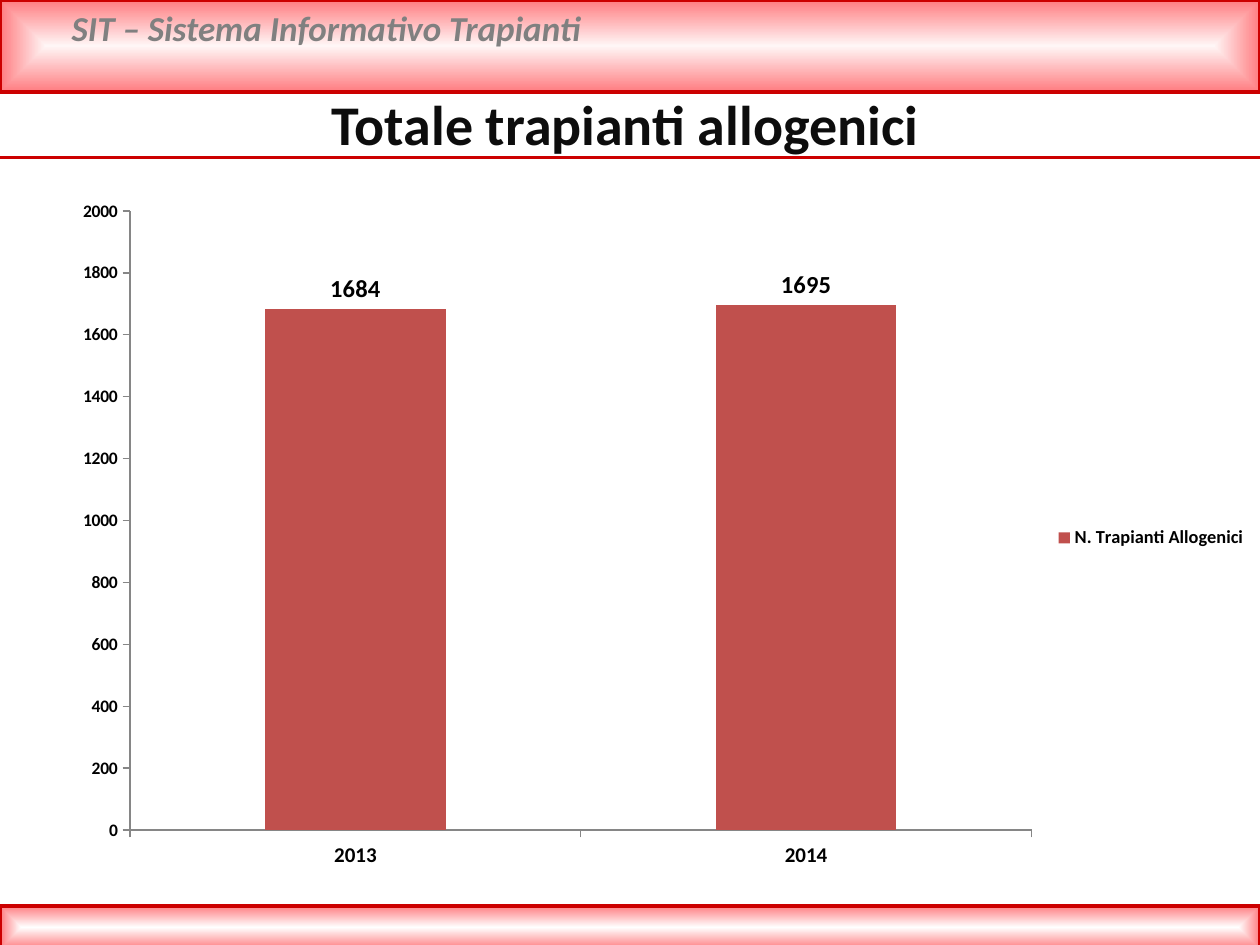
from lxml import etree
from pptx import Presentation
from pptx import util as u
from pptx.chart.data import CategoryChartData
from pptx.dml.color import RGBColor
from pptx.enum import chart as ch, shapes, text
from pptx.oxml import parse_xml
from pptx.oxml.ns import nsdecls, qn

COLORS = {"rule": "CC0000", "band": "FF7C80", "header_glow": "FFF6F6",
          "footer_glow": "FFFFFF", "system": "808080", "title": "0D0D0D",
          "bar": "C0504D", "axis": "868686", "label": "000000"}
FONT = "Calibri"
BLANK_LAYOUT = 6


def rgb(name):
    return RGBColor.from_string(COLORS[name])


def set_font(font, color, **formats):
    font.name = FONT
    font.color.rgb = rgb(color)
    for name, value in formats.items():
        setattr(font, name, u.Pt(value) if name == "size" else value)


def set_line(line, color, width):
    line.color.rgb = rgb(color)
    line.width = u.Pt(width)


def add_band(page, top, height, glow):
    """Full-width bar whose gradient runs from its centre to its edges."""
    band = page.shapes.add_shape(shapes.MSO_SHAPE.RECTANGLE, 0, u.Inches(top),
                                 u.Inches(10), u.Inches(height))
    band.shadow.inherit = False
    set_line(band.line, "rule", 2)
    gradient = parse_xml(
        f'<a:gradFill {nsdecls("a")} rotWithShape="1"><a:gsLst>'
        f'<a:gs pos="0"><a:srgbClr val="{COLORS[glow]}"/></a:gs>'
        f'<a:gs pos="100000"><a:srgbClr val="{COLORS["band"]}"/></a:gs></a:gsLst>'
        '<a:path path="shape"><a:fillToRect l="50000" t="50000" r="50000" b="50000"/>'
        '</a:path></a:gradFill>')
    band.element.spPr.find(qn("a:prstGeom")).addnext(gradient)


def add_rule(page, top):
    rule = page.shapes.add_connector(shapes.MSO_CONNECTOR.STRAIGHT, 0, u.Inches(top),
                                     u.Inches(10), u.Inches(top))
    set_line(rule.line, "rule", 2)
    etree.SubElement(rule.element.spPr, qn("a:effectLst"))


def add_text(page, bounds, words, color, align, **formats):
    box = page.shapes.add_textbox(*map(u.Inches, bounds))
    box.text_frame.word_wrap = True
    para = box.text_frame.paragraphs[0]
    para.alignment = align
    span = para.add_run()
    span.text = words
    set_font(span.font, color, **formats)


def place_plot(chart, **fractions):
    """Fix the inner plot area, in fractions of the chart."""
    area = chart.element.find(".//" + qn("c:plotArea"))
    for layout in area.findall(qn("c:layout")):
        area.remove(layout)
    sizes = "".join(f'<c:{name} val="{value}"/>' for name, value in fractions.items())
    area.insert(0, parse_xml(
        f'<c:layout {nsdecls("c")}><c:manualLayout><c:layoutTarget val="inner"/>'
        f'<c:xMode val="edge"/><c:yMode val="edge"/>{sizes}'
        '</c:manualLayout></c:layout>'))


def style_axis(axis, size):
    axis.has_major_gridlines = False
    axis.major_tick_mark = ch.XL_TICK_MARK.OUTSIDE
    axis.minor_tick_mark = ch.XL_TICK_MARK.NONE
    set_line(axis.format.line, "axis", 0.75)
    set_font(axis.tick_labels.font, "label", size=size, bold=True)


def add_transplant_chart(page, bounds):
    data = CategoryChartData()
    data.categories = ["2013", "2014"]
    data.add_series("N. Trapianti Allogenici", [1684, 1695])
    chart = page.shapes.add_chart(ch.XL_CHART_TYPE.COLUMN_CLUSTERED,
                                  *map(u.Inches, bounds), data).chart
    set_font(chart.font, "label", size=10)
    chart.has_title = False
    place_plot(chart, x=0.06, y=0.03, w=0.75, h=0.89)

    style_axis(chart.category_axis, 12)
    style_axis(chart.value_axis, 10)
    for name, value in {"minimum_scale": 0, "maximum_scale": 2000,
                        "major_unit": 200}.items():
        setattr(chart.value_axis, name, value)

    chart.has_legend = True
    chart.legend.position = ch.XL_LEGEND_POSITION.RIGHT
    chart.legend.include_in_layout = False
    set_font(chart.legend.font, "label", size=10.5, bold=True)

    plot = chart.plots[0]
    plot.gap_width = 150
    plot.vary_by_categories = False
    series = plot.series[0]
    series.format.fill.solid()
    series.format.fill.fore_color.rgb = rgb("bar")
    labels = series.data_labels
    labels.show_value = True
    labels.position = ch.XL_LABEL_POSITION.OUTSIDE_END
    set_font(labels.font, "label", size=14, bold=True)


def main():
    deck = Presentation()
    deck.slide_width, deck.slide_height = u.Inches(10), u.Inches(7.5)
    page = deck.slides.add_slide(deck.slide_layouts[BLANK_LAYOUT])
    add_band(page, 0, 0.73, "header_glow")
    add_text(page, (0.47, 0, 8.98, 0.44), "SIT – Sistema Informativo Trapianti",
             "system", text.PP_ALIGN.LEFT, size=20, bold=True, italic=True)
    add_band(page, 7.19, 0.34, "footer_glow")
    add_rule(page, 1.25)
    add_transplant_chart(page, (0.46, 1.51, 9.54, 5.52))
    add_text(page, (0.33, 0.66, 9.27, 0.64), "Totale trapianti allogenici",
             "title", text.PP_ALIGN.CENTER, size=32, bold=True)
    deck.save("out.pptx")


if __name__ == "__main__":
    main()
